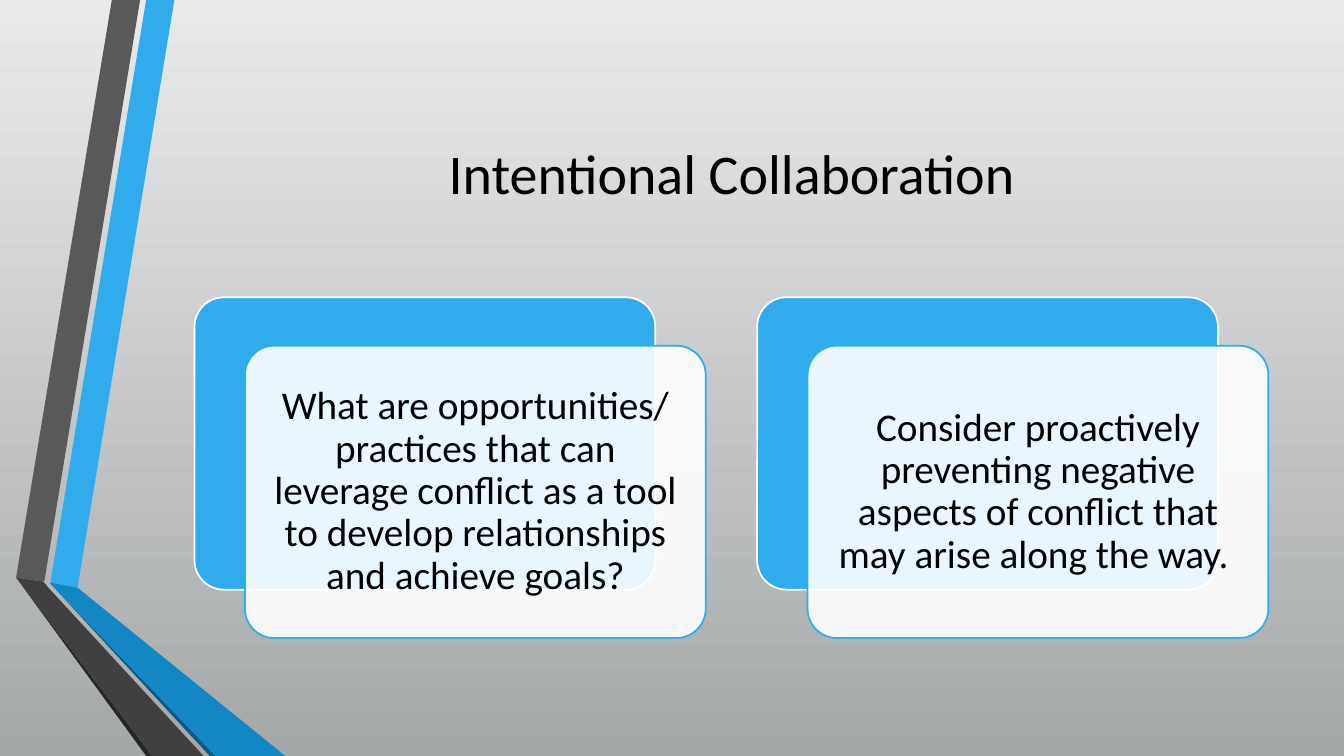
import pptx
import pptx.dml.color
import pptx.enum.shapes
import pptx.enum.text
import pptx.oxml
import pptx.oxml.ns
import pptx.util

RGBColor = pptx.dml.color.RGBColor
BLUE = RGBColor(0x30, 0xAC, 0xEC)
MID_BLUE = RGBColor(0x12, 0x87, 0xC3)
DEEP_BLUE = RGBColor(0x0C, 0x5A, 0x82)
GREY = RGBColor(0x59, 0x59, 0x59)
DARK_GREY = RGBColor(0x40, 0x40, 0x40)
NEAR_BLACK = RGBColor(0x26, 0x26, 0x26)
BLACK = RGBColor(0, 0, 0)
WHITE = RGBColor(0xFF, 0xFF, 0xFF)
BACKGROUND_TOP = RGBColor(0xE9, 0xEA, 0xEB)
BACKGROUND_BOTTOM = RGBColor(0xA5, 0xA8, 0xA9)

EMU_PER_PX = 9144  # 100 px to the inch

RIBBONS = [
    (BLUE, [(50, 578), (77, 583), (173, 0), (145, 0)]),
    (GREY, [(139, 0), (111, 0), (16, 573), (44, 577)]),
    (NEAR_BLACK, [(16, 573), (145, 750), (151, 750)]),
    (DEEP_BLUE, [(50, 579), (208, 750), (214, 750)]),
    (MID_BLUE, [(50, 579), (214, 750), (283, 750), (77, 583), (50, 578)]),
    (DARK_GREY, [(202, 750), (48, 583), (43, 577), (16, 573), (151, 750)]),
]

CARD_TEXTS = [
    "What are opportunities/ practices that can leverage conflict as a tool "
    "to develop relationships and achieve goals?",
    "Consider proactively preventing negative aspects of conflict that may "
    "arise along the way. ",
]
CARD_LEFT, CARD_TOP, CARD_PITCH = 193, 295, 558
CARD_SIZE = (457, 290)
CARD_OFFSET = (50, 48)


def px(length):
    return pptx.util.Emu(length * EMU_PER_PX)


class SlideBuilder:
    font_name = "Calibri"
    text_color = BLACK

    def __init__(self, presentation):
        self.slide = presentation.slides.add_slide(presentation.slide_layouts[5])

    def background(self, top_color, bottom_color):
        fill = self.slide.background.fill
        fill.gradient()
        fill.gradient_angle = 270
        for stop, color in zip(fill.gradient_stops, (top_color, bottom_color)):
            stop.color.rgb = color

    def set_text(self, shape, text, *, size, inset=10, line_spacing=1.0):
        """Fill the shape with one centred paragraph."""
        frame = shape.text_frame
        frame.word_wrap = True
        frame.auto_size = pptx.enum.text.MSO_AUTO_SIZE.NONE
        frame.vertical_anchor = pptx.enum.text.MSO_ANCHOR.MIDDLE
        frame.margin_left = frame.margin_right = px(inset)
        frame.margin_top = frame.margin_bottom = px(inset)
        paragraph = frame.paragraphs[0]
        paragraph.alignment = pptx.enum.text.PP_ALIGN.CENTER
        paragraph.line_spacing = line_spacing
        run = paragraph.add_run()
        run.text = text
        run.font.name = self.font_name
        run.font.size = pptx.util.Pt(size)
        run.font.color.rgb = self.text_color

    def title(self, text, left, top, width, height):
        title = self.slide.shapes.title
        title.left, title.top = px(left), px(top)
        title.width, title.height = px(width), px(height)
        self.set_text(title, text, size=40)

    def polygon(self, points, color):
        builder = self.slide.shapes.build_freeform(*points[0], scale=EMU_PER_PX)
        builder.add_line_segments(points[1:], close=True)
        shape = builder.convert_to_shape()
        shape.shadow.inherit = False
        shape.fill.solid()
        shape.fill.fore_color.rgb = color
        shape.line.fill.background()

    def rounded_box(self, left, top, width, height, fill, line, opacity=100):
        shape = self.slide.shapes.add_shape(
            pptx.enum.shapes.MSO_SHAPE.ROUNDED_RECTANGLE,
            px(left), px(top), px(width), px(height))
        shape.adjustments[0] = 0.1
        shape.shadow.inherit = False
        shape.fill.solid()
        shape.fill.fore_color.rgb = fill
        shape.line.color.rgb = line
        shape.line.width = pptx.util.Pt(1.25)
        if opacity < 100:
            qn = pptx.oxml.ns.qn
            solid_fill = shape.element.spPr.find(qn("a:solidFill"))
            alpha = pptx.oxml.parse_xml(
                f'<a:alpha {pptx.oxml.ns.nsdecls("a")} val="{opacity * 1000}"/>')
            solid_fill.find(qn("a:srgbClr")).append(alpha)
        return shape

    def card(self, text, left, top):
        """Draw a blue box with a translucent text box shifted over it."""
        self.rounded_box(left, top, *CARD_SIZE, fill=BLUE, line=WHITE)
        front = self.rounded_box(left + CARD_OFFSET[0], top + CARD_OFFSET[1],
                                 *CARD_SIZE, fill=WHITE, line=BLUE, opacity=90)
        self.set_text(front, text, size=28, inset=12, line_spacing=0.9)


def main():
    presentation = pptx.Presentation()
    presentation.slide_width = pptx.util.Inches(13.33)
    presentation.slide_height = pptx.util.Inches(7.5)
    builder = SlideBuilder(presentation)
    builder.background(BACKGROUND_TOP, BACKGROUND_BOTTOM)
    for color, points in RIBBONS:
        builder.polygon(points, color)
    builder.title("Intentional Collaboration", 193, 75, 1065, 192)
    for index, text in enumerate(CARD_TEXTS):
        builder.card(text, CARD_LEFT + index * CARD_PITCH, CARD_TOP)
    presentation.save("out.pptx")


if __name__ == "__main__":
    main()
